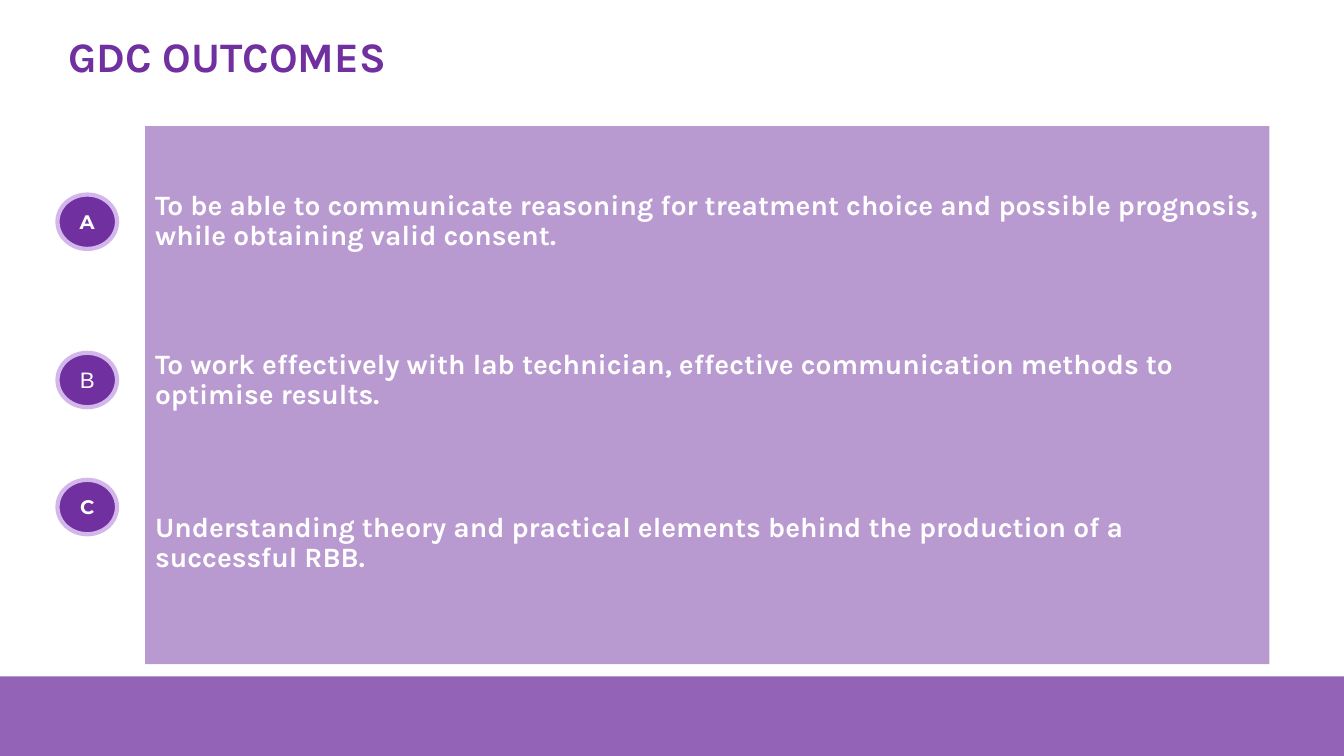
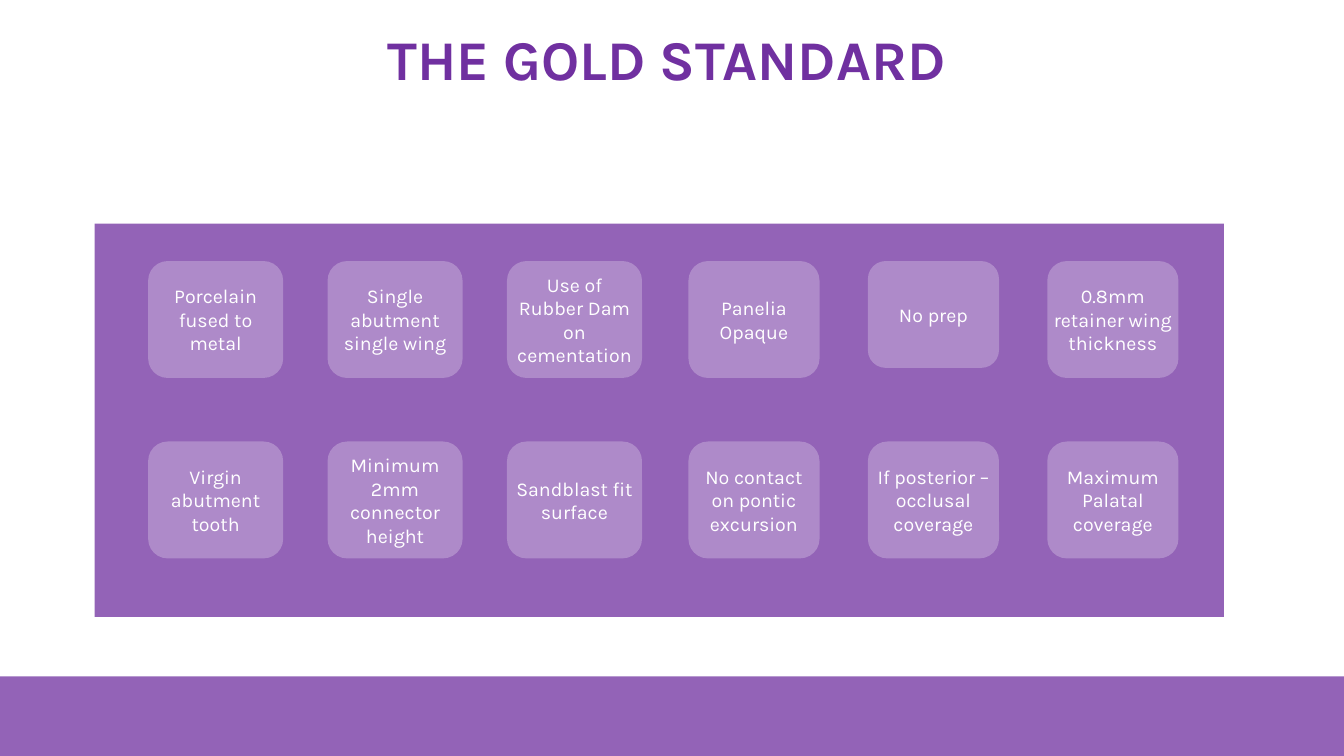
from dataclasses import dataclass

from lxml.etree import SubElement
from pptx import Presentation
from pptx.dml.color import RGBColor
from pptx.enum.shapes import MSO_SHAPE as Shape
from pptx.enum.text import MSO_ANCHOR as Anchor, PP_ALIGN as Align
from pptx.oxml.ns import qn
from pptx.util import Emu, Inches, Pt


@dataclass(frozen=True)
class Theme:
    purple: str = "7030A0"
    lilac: str = "D3B6EA"
    white: str = "FFFFFF"
    band_alpha: int = 75
    outcome_alpha: int = 49
    card_alpha: int = 25
    font: str = "Karla"
    badge_font: str = "Montserrat"
    plain_font: str = "Arial"
    title_size: int = 30
    big_title_size: int = 40
    outcome_size: int = 20
    badge_size: int = 14
    plain_badge_size: int = 16
    card_size: int = 14
    line_spacing: float = 0.9


THEME = Theme()


@dataclass(frozen=True)
class Box:
    left: int
    top: int
    width: int
    height: int

    def inner(self, left, top, width, height):
        """Return an inner box given in percent of this one."""
        return Box(Emu(int(self.left + self.width * left / 100)),
                   Emu(int(self.top + self.height * top / 100)),
                   Emu(int(self.width * width / 100)),
                   Emu(int(self.height * height / 100)))

    def bounds(self):
        return self.left, self.top, self.width, self.height


PAGE = Box(0, 0, Inches(13.33), Inches(7.5))

# Outcome text, space before it in points
OUTCOMES = [
    ("To be able to communicate reasoning for treatment choice and possible "
     "prognosis, while obtaining valid consent.", 0),
    ("To work effectively with lab technician, effective communication "
     "methods to optimise results.", 70),
    ("Understanding theory and practical elements behind the production of "
     "a successful RBB.", 73.5),
]

# Letter, top in percent of the panel, font, size, bold
BADGES = [
    ("A", 12.73, THEME.badge_font, THEME.badge_size, True),
    ("B", 42.13, THEME.plain_font, THEME.plain_badge_size, False),
    ("C", 65.73, THEME.badge_font, THEME.badge_size, True),
]

STANDARDS = [
    ["Porcelain fused to metal", "Single abutment single wing",
     "Use of Rubber Dam on cementation", "Panelia Opaque", "No prep",
     "0.8mm retainer wing thickness"],
    ["Virgin abutment tooth", "Minimum 2mm connector height",
     "Sandblast fit surface", "No contact on pontic excursion",
     "If posterior – occlusal coverage", "Maximum Palatal coverage"],
]
SHORT_CARD = "No prep"


def add_block(slide, kind, box, color, alpha=100):
    block = slide.shapes.add_shape(kind, *box.bounds())
    block.shadow.inherit = False
    block.fill.solid()
    block.fill.fore_color.rgb = RGBColor.from_string(color)
    block.line.fill.background()
    if alpha < 100:
        # The first solid fill in the shape's XML is its own fill
        tint = next(block.element.iter(qn("a:solidFill")))[0]
        SubElement(tint, qn("a:alpha")).set("val", str(alpha * 1000))
    return block


def style(paragraph, size, color=THEME.white, font=THEME.font, bold=False,
          align=Align.CENTER):
    paragraph.alignment = align
    paragraph.font.name = font
    paragraph.font.size = Pt(size)
    paragraph.font.bold = bold
    paragraph.font.color.rgb = RGBColor.from_string(color)


def add_page(deck, title, title_box, size, align):
    """Blank slide with the shared footer band and title style."""
    slide = deck.slides.add_slide(deck.slide_layouts[6])
    add_block(slide, Shape.RECTANGLE, PAGE.inner(0, 89.47, 100, 10.53),
              THEME.purple, THEME.band_alpha)
    frame = slide.shapes.add_textbox(*title_box.bounds()).text_frame
    frame.word_wrap = True
    frame.vertical_anchor = Anchor.MIDDLE
    heading = frame.paragraphs[0]
    heading.text = title
    heading.line_spacing = THEME.line_spacing
    style(heading, size, THEME.purple, bold=True, align=align)
    return slide


def add_outcomes(slide, box):
    panel = add_block(slide, Shape.RECTANGLE, box, THEME.purple,
                      THEME.outcome_alpha)
    frame = panel.text_frame
    frame.word_wrap = True
    frame.vertical_anchor = Anchor.TOP
    frame.margin_top = box.inner(0, 0, 100, 12.17).height
    for index, (text, gap) in enumerate(OUTCOMES):
        outcome = frame.add_paragraph() if index else frame.paragraphs[0]
        outcome.text = text
        outcome.line_spacing = THEME.line_spacing
        outcome.space_before = Pt(gap)
        style(outcome, THEME.outcome_size, bold=True, align=Align.LEFT)


def add_badges(slide, box):
    for letter, top, font, size, bold in BADGES:
        badge = add_block(slide, Shape.OVAL, box.inner(0, top, 100, 10.11),
                          THEME.purple)
        badge.line.color.rgb = RGBColor.from_string(THEME.lilac)
        badge.line.width = Pt(3)
        frame = badge.text_frame
        frame.vertical_anchor = Anchor.MIDDLE
        frame.text = letter
        style(frame.paragraphs[0], size, font=font, bold=bold)


def add_standards(slide, box):
    add_block(slide, Shape.RECTANGLE, box, THEME.purple, THEME.band_alpha)
    for row, standards in enumerate(STANDARDS):
        for column, text in enumerate(standards):
            width = 11.96 if column < 3 else 11.61
            height = 27.18 if text == SHORT_CARD else 29.74
            center = 10.71 + 15.89 * column
            cell = box.inner(center - width / 2, 9.49 + 45.9 * row,
                             width, height)
            card = add_block(slide, Shape.ROUNDED_RECTANGLE, cell,
                             THEME.white, THEME.card_alpha)
            frame = card.text_frame
            frame.word_wrap = True
            frame.vertical_anchor = Anchor.MIDDLE
            frame.margin_left = frame.margin_right = 0
            frame.text = text
            style(frame.paragraphs[0], THEME.card_size)


def outcomes_slide(deck):
    slide = add_page(deck, "GDC OUTCOMES",
                     PAGE.inner(4.35, 2.27, 69.47, 10.93),
                     THEME.title_size, Align.LEFT)
    add_outcomes(slide, PAGE.inner(10.8, 16.67, 83.65, 71.2))
    add_badges(slide, PAGE.inner(4.28, 16.67, 4.43, 71.2))


def standards_slide(deck):
    slide = add_page(deck, "THE GOLD STANDARD",
                     PAGE.inner(14.85, 2.8, 69.47, 10.93),
                     THEME.big_title_size, Align.CENTER)
    add_standards(slide, PAGE.inner(7.05, 29.6, 84.02, 52))


def main():
    deck = Presentation()
    deck.slide_width, deck.slide_height = PAGE.width, PAGE.height
    outcomes_slide(deck)
    standards_slide(deck)
    deck.save("out.pptx")


if __name__ == "__main__":
    main()
